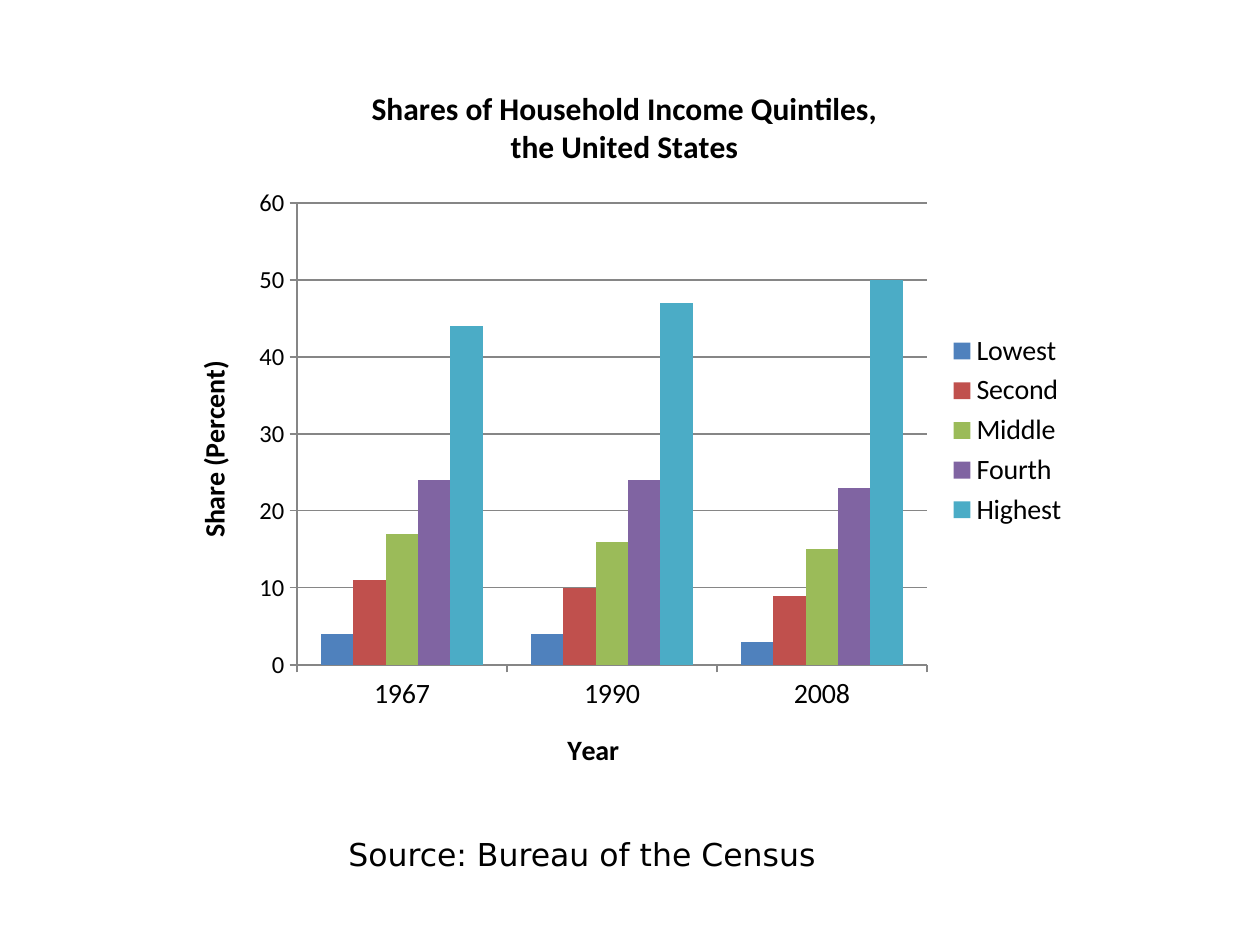
"""Build a slide with a clustered column chart of household income shares."""
import pptx
import pptx.chart.data
import pptx.dml.color
import pptx.enum.chart
import pptx.oxml
import pptx.oxml.ns
import pptx.util

PX = 914400 / 126
COLORS = {
    "text": "000000", "line": "868686",
    "Lowest": "4F81BD", "Second": "C0504D", "Middle": "9BBB59",
    "Fourth": "8064A2", "Highest": "4BACC6",
}
TITLE = ["Shares of Household Income Quintiles,", "the United States"]
SOURCE = "Source: Bureau of the Census"
YEARS = ["1967", "1990", "2008"]
SHARES = {
    "Lowest": (4, 4, 3),
    "Second": (11, 10, 9),
    "Middle": (17, 16, 15),
    "Fourth": (24, 24, 23),
    "Highest": (44, 47, 50),
}
CHART_BOX = (168, 63, 913, 735)
PLOT_BOX = (297, 203, 630, 462)
SOURCE_BOX = (336, 829, 620, 50)


def emu(box):
    return [pptx.util.Emu(round(value * PX)) for value in box]


def rgb(name):
    return pptx.dml.color.RGBColor.from_string(COLORS[name])


def style_font(font, size, name="Calibri", bold=False):
    font.size = pptx.util.Pt(size)
    font.name = name
    font.bold = bold
    font.color.rgb = rgb("text")


def write_text(frame, lines, **style):
    for index, line in enumerate(lines):
        paragraph = frame.add_paragraph() if index else frame.paragraphs[0]
        run = paragraph.add_run()
        run.text = line
        style_font(run.font, **style)


def style_line(line):
    line.color.rgb = rgb("line")
    line.width = pptx.util.Pt(0.75)


def style_axis(axis, title, size):
    write_text(axis.axis_title.text_frame, [title], size=16, bold=True)
    style_font(axis.tick_labels.font, size)
    axis.major_tick_mark = pptx.enum.chart.XL_TICK_MARK.OUTSIDE
    axis.minor_tick_mark = pptx.enum.chart.XL_TICK_MARK.NONE
    style_line(axis.format.line)


def place_plot(chart):
    left, top, width, height = CHART_BOX
    plot_left, plot_top, plot_width, plot_height = PLOT_BOX
    settings = {
        "layoutTarget": "inner", "xMode": "edge", "yMode": "edge",
        "x": round((plot_left - left) / width, 4),
        "y": round((plot_top - top) / height, 4),
        "w": round(plot_width / width, 4),
        "h": round(plot_height / height, 4),
    }
    items = "".join(f'<c:{key} val="{value}"/>' for key, value in settings.items())
    layout = pptx.oxml.parse_xml(
        f'<c:layout {pptx.oxml.ns.nsdecls("c")}>'
        f"<c:manualLayout>{items}</c:manualLayout></c:layout>")
    plot_area = chart._chartSpace.chart.plotArea
    for old_layout in plot_area.findall(pptx.oxml.ns.qn("c:layout")):
        plot_area.remove(old_layout)
    plot_area.insert(0, layout)


def add_income_chart(slide):
    data = pptx.chart.data.CategoryChartData()
    data.categories = YEARS
    for name, values in SHARES.items():
        data.add_series(name, values)
    chart = slide.shapes.add_chart(
        pptx.enum.chart.XL_CHART_TYPE.COLUMN_CLUSTERED, *emu(CHART_BOX), data).chart
    style_font(chart.font, 10)
    write_text(chart.chart_title.text_frame, TITLE, size=18, bold=True)
    chart.chart_title.include_in_layout = False

    plot = chart.plots[0]
    plot.gap_width = 150
    plot.overlap = 0
    plot.vary_by_categories = False
    for series in plot.series:
        series.format.fill.solid()
        series.format.fill.fore_color.rgb = rgb(series.name)

    style_axis(chart.category_axis, "Year", 16)
    style_axis(chart.value_axis, "Share (Percent)", 14)
    chart.value_axis.minimum_scale = 0
    chart.value_axis.maximum_scale = 60
    chart.value_axis.major_unit = 10
    style_line(chart.value_axis.major_gridlines.format.line)

    chart.has_legend = True
    chart.legend.position = pptx.enum.chart.XL_LEGEND_POSITION.RIGHT
    chart.legend.include_in_layout = False
    style_font(chart.legend.font, 16)
    place_plot(chart)


def main():
    presentation = pptx.Presentation()
    presentation.slide_width = pptx.util.Inches(10)
    presentation.slide_height = pptx.util.Inches(7.5)
    slide = presentation.slides.add_slide(presentation.slide_layouts[6])
    add_income_chart(slide)
    source = slide.shapes.add_textbox(*emu(SOURCE_BOX)).text_frame
    source.word_wrap = True
    write_text(source, [SOURCE], size=18, name="DejaVu Sans")
    presentation.save("out.pptx")


if __name__ == "__main__":
    main()
